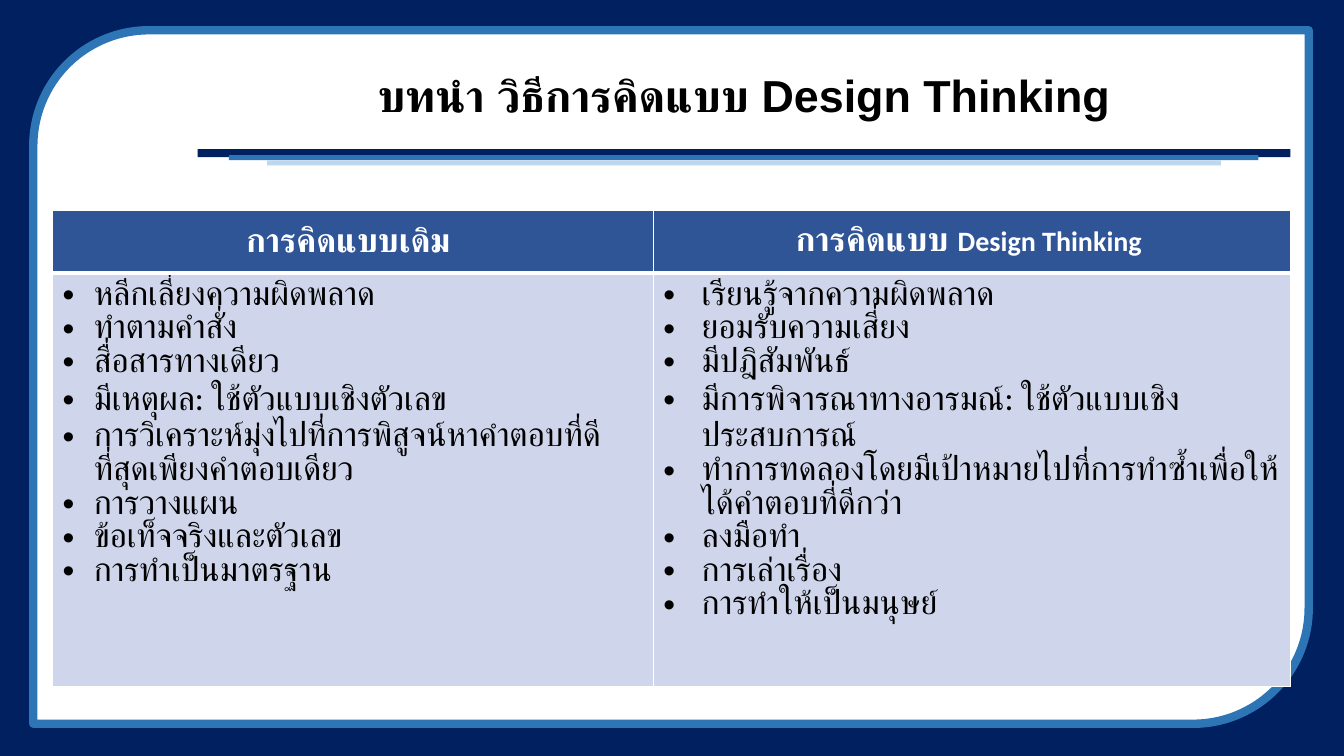
"""Build a slide comparing traditional thinking with Design Thinking."""
from lxml.etree import SubElement
from pptx import Presentation
from pptx.dml.color import RGBColor
from pptx.enum.shapes import MSO_SHAPE as Shape
from pptx.enum.text import MSO_ANCHOR as Anchor, PP_ALIGN as Align
from pptx.oxml.ns import qn
from pptx.util import Inches, Pt

NAVY = RGBColor(0x00, 0x20, 0x60)
BLUE = RGBColor(0x2E, 0x75, 0xB6)
PALE_BLUE = RGBColor(0xBD, 0xD7, 0xEE)
HEADER_BLUE = RGBColor(0x2F, 0x55, 0x97)
BODY_BLUE = RGBColor(0xCF, 0xD5, 0xEA)
WHITE = RGBColor(0xFF, 0xFF, 0xFF)
BLACK = RGBColor(0x00, 0x00, 0x00)

TITLE = "บทนำ วิธีการคิดแบบ Design Thinking"
COLUMNS = [
    {
        "width": 5.96,
        "indent": 0.31,
        "header": [("การคิดแบบเดิม ", 24)],
        "points": [
            "หลีกเลี่ยงความผิดพลาด",
            "ทำตามคำสั่ง",
            "สื่อสารทางเดียว",
            "มีเหตุผล: ใช้ตัวแบบเชิงตัวเลข",
            "การวิเคราะห์มุ่งไปที่การพิสูจน์หาคำตอบที่ดีที่สุดเพียงคำตอบเดียว",
            "การวางแผน",
            "ข้อเท็จจริงและตัวเลข",
            "การทำเป็นมาตรฐาน",
        ],
    },
    {
        "width": 6.32,
        "indent": 0.38,
        "header": [("การคิดแบบ ", 24), ("Design Thinking ", 20)],
        "points": [
            "เรียนรู้จากความผิดพลาด",
            "ยอมรับความเสี่ยง",
            "มีปฎิสัมพันธ์",
            "มีการพิจารณาทางอารมณ์: ใช้ตัวแบบเชิงประสบการณ์",
            "ทำการทดลองโดยมีเป้าหมายไปที่การทำซ้ำเพื่อให้ได้คำตอบที่ดีกว่า",
            "ลงมือทำ",
            "การเล่าเรื่อง",
            "การทำให้เป็นมนุษย์",
        ],
    },
]
RULES = [
    (1.96, 1.48, 10.84, 0.08, NAVY),
    (2.27, 1.54, 10.21, 0.05, BLUE),
    (2.65, 1.59, 9.46, 0.05, PALE_BLUE),
]
ROW_HEIGHTS = (0.62, 3.5)


def add_panel(page, kind, left, top, width, height, fill, line=None):
    panel = page.shapes.add_shape(
        kind, Inches(left), Inches(top), Inches(width), Inches(height))
    panel.shadow.inherit = False
    panel.fill.solid()
    panel.fill.fore_color.rgb = fill
    if line is None:
        panel.line.fill.background()
    else:
        panel.line.color.rgb = line
        panel.line.width = Pt(6)
    return panel


def write(para, text, size=24, font="Calibri", color=BLACK, bold=False):
    span = para.add_run()
    span.text = text
    span.font.size = Pt(size)
    span.font.name = font
    span.font.bold = bold
    span.font.color.rgb = color


def add_bullet(para, indent):
    properties = para._p.get_or_add_pPr()
    properties.set("marL", str(Inches(indent)))
    properties.set("indent", str(-Inches(indent)))
    SubElement(properties, qn("a:buFont"), typeface="Arial")
    SubElement(properties, qn("a:buChar"), char="•")


def style_cell(cell, fill, top_width, bottom_width):
    properties = cell._tc.get_or_add_tcPr()
    widths = {"lnL": 1, "lnR": 1, "lnT": top_width, "lnB": bottom_width}
    for side, width in widths.items():
        border = SubElement(properties, qn(f"a:{side}"), w=str(Pt(width)))
        paint = SubElement(border, qn("a:solidFill"))
        SubElement(paint, qn("a:srgbClr"), val=str(WHITE))
    cell.fill.solid()
    cell.fill.fore_color.rgb = fill


def add_title(page):
    box = page.shapes.add_textbox(
        Inches(1.96), Inches(0.49), Inches(10.84), Inches(0.97))
    frame = box.text_frame
    frame.word_wrap = True
    frame.vertical_anchor = Anchor.MIDDLE
    para = frame.paragraphs[0]
    para.alignment = Align.CENTER
    para.line_spacing = 0.9
    write(para, TITLE, size=32, font="Arial", bold=True)


def add_comparison(page):
    total_width = sum(column["width"] for column in COLUMNS)
    table = page.shapes.add_table(
        2, len(COLUMNS), Inches(0.52), Inches(2.09),
        Inches(total_width), Inches(sum(ROW_HEIGHTS))).table
    for row, height in zip(table.rows, ROW_HEIGHTS):
        row.height = Inches(height)
    for index, column in enumerate(COLUMNS):
        table.columns[index].width = Inches(column["width"])
        header, body = table.cell(0, index), table.cell(1, index)
        style_cell(header, HEADER_BLUE, 1, 3)
        style_cell(body, BODY_BLUE, 3, 1)
        header.vertical_anchor = Anchor.MIDDLE
        para = header.text_frame.paragraphs[0]
        para.alignment = Align.CENTER
        for text, size in column["header"]:
            write(para, text, size=size, color=WHITE, bold=True)
        frame = body.text_frame
        for number, point in enumerate(column["points"]):
            para = frame.add_paragraph() if number else frame.paragraphs[0]
            add_bullet(para, column["indent"])
            write(para, point)


def main():
    deck = Presentation()
    deck.slide_width, deck.slide_height = Inches(13.33), Inches(7.5)
    page = deck.slides.add_slide(deck.slide_layouts[6])
    add_panel(page, Shape.RECTANGLE, 0, 0, 13.33, 7.5, NAVY)
    card = add_panel(page, Shape.ROUND_2_DIAG_RECTANGLE,
                     0.33, 0.3, 12.65, 6.88, WHITE, line=BLUE)
    card.rotation = 180
    for left, top, width, height, color in RULES:
        add_panel(page, Shape.RECTANGLE, left, top, width, height, color)
    add_title(page)
    add_comparison(page)
    deck.save("out.pptx")


if __name__ == "__main__":
    main()
